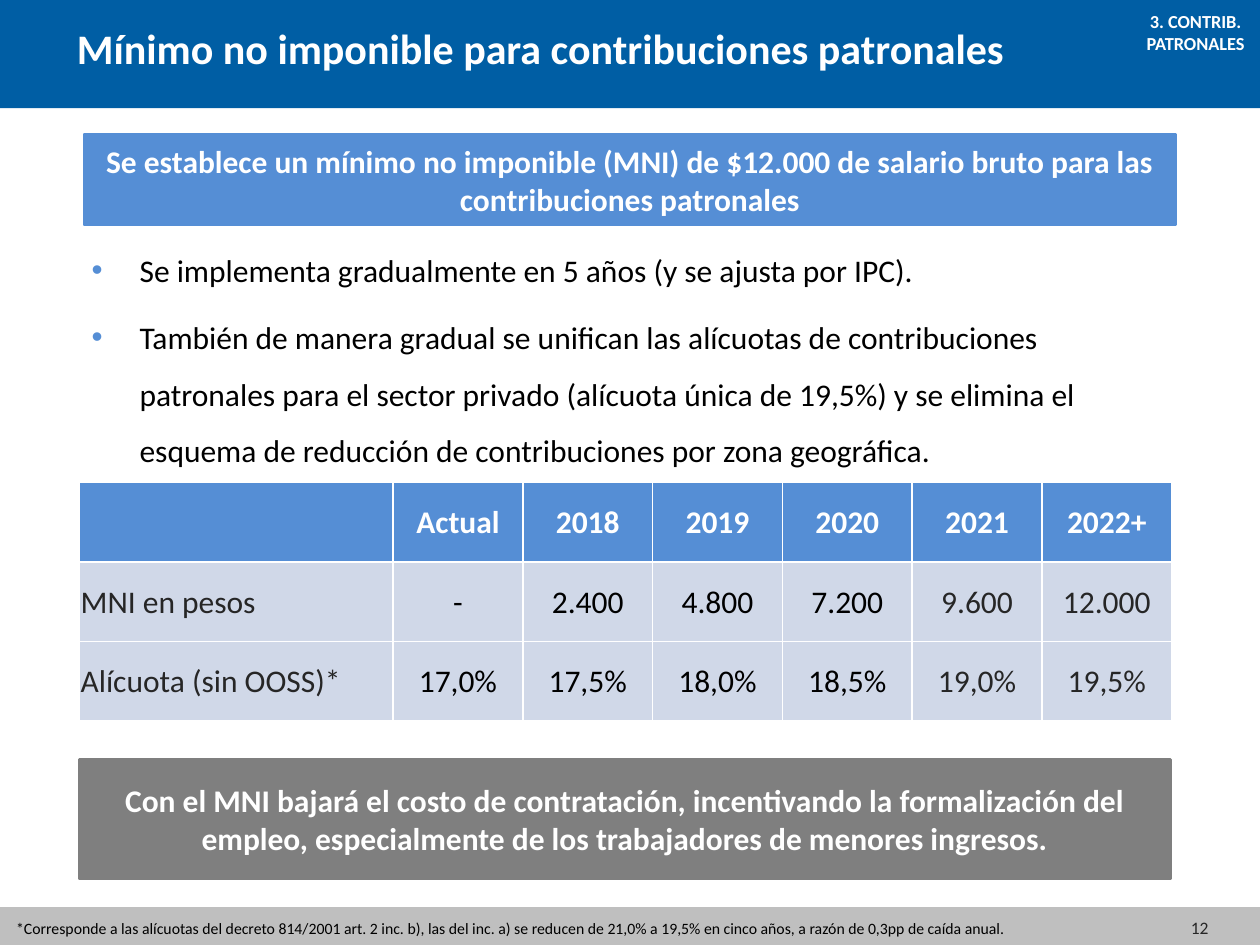
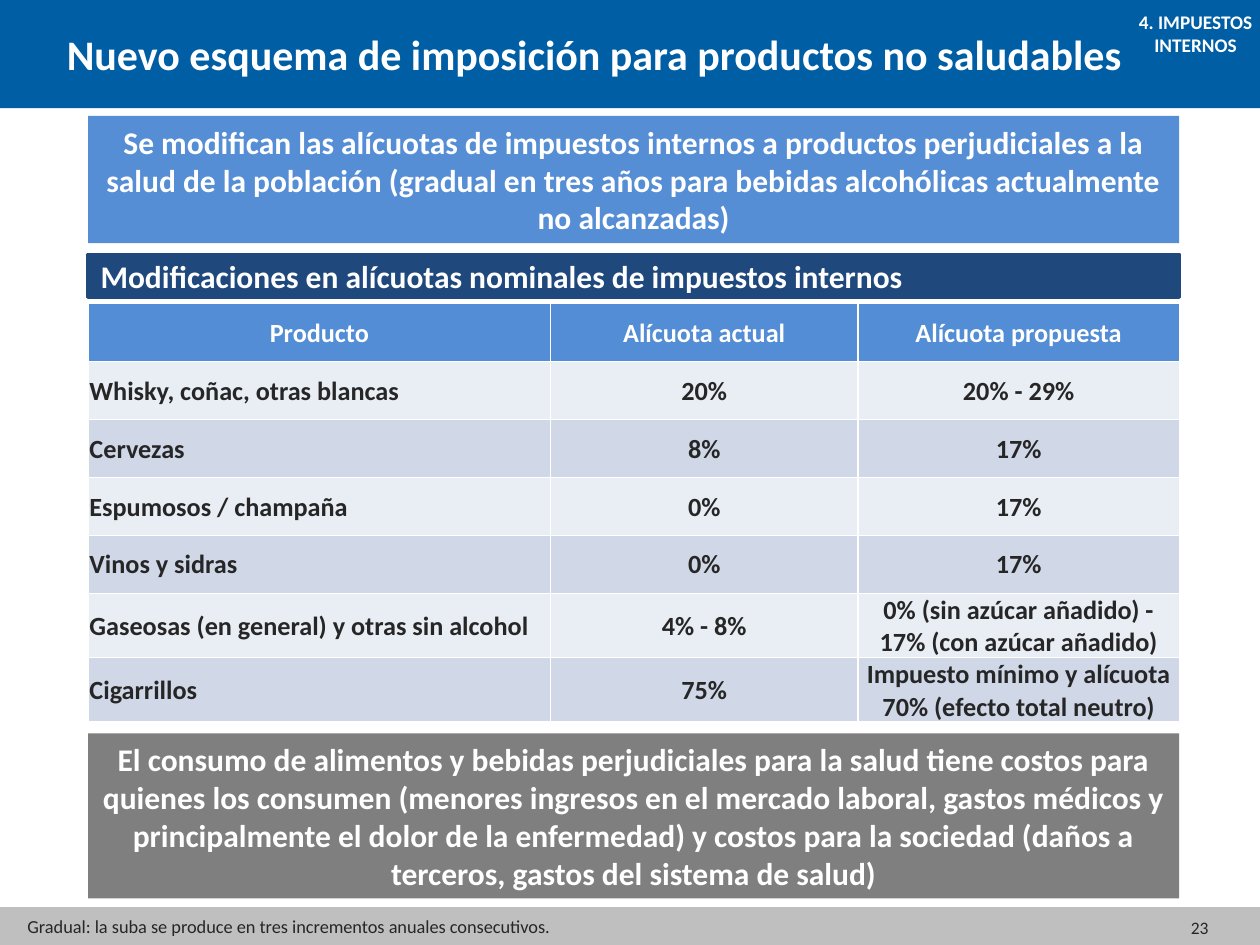
from lxml.etree import SubElement
from pptx import Presentation
from pptx.dml.color import RGBColor
from pptx.enum.shapes import MSO_SHAPE
from pptx.enum.text import MSO_ANCHOR, MSO_AUTO_SIZE, PP_ALIGN
from pptx.oxml import parse_xml
from pptx.oxml.ns import nsdecls, qn
from pptx.util import Inches, Pt

FONT = "Calibri"
COLORS = {
    "header": "005EA4", "footer": "BFBFBF", "blue": "558ED5", "table_blue": "538DD5",
    "navy": "1F497D", "gray": "7F7F7F", "row_light": "E9EDF4", "row_dark": "D0D8E8",
    "white": "FFFFFF", "black": "000000", "ink": "262626",
}
LEFT, CENTER, RIGHT = PP_ALIGN.LEFT, PP_ALIGN.CENTER, PP_ALIGN.RIGHT

# Content: boxes are (left, top, width, height) in inches
CONTRIBUTIONS = {
    "title": "Mínimo no imponible para contribuciones patronales",
    "title_box": (0.51, 0.13, 8.66, 0.5),
    "section": ["3. CONTRIB.", "PATRONALES"],
    "section_size": 10.5,
    "number": "12",
    "footnote": "*Corresponde a las alícuotas del decreto 814/2001 art. 2 inc. b), las del inc. a) "
                "se reducen de 21,0% a 19,5% en cinco años, a razón de 0,3pp de caída anual.",
    "footnote_style": ((0.03, 7.18, 9.66, 0.38), 9, "black"),
    "banners": [
        ((0.67, 1.07, 8.66, 0.71), "blue", 2, CENTER,
         ["Se establece un mínimo no imponible (MNI) de $12.000 de salario bruto para las "
          "contribuciones patronales"]),
        ((0.63, 6.03, 8.66, 0.94), "gray", 2, CENTER,
         ["Con el MNI bajará el costo de contratación, incentivando la formalización del "
          "empleo, especialmente de los trabajadores de menores ingresos."]),
    ],
}
BULLETS = [
    "Se implementa gradualmente en 5 años (y se ajusta por IPC).",
    "También de manera gradual se unifican las alícuotas de contribuciones patronales para el "
    "sector privado (alícuota única de 19,5%) y se elimina el esquema de reducción de "
    "contribuciones por zona geográfica.",
]
MNI_ROWS = [
    ("", "Actual", "2018", "2019", "2020", "2021", "2022+"),
    ("MNI en pesos", "-", "2.400", "4.800", "7.200", "9.600", "12.000"),
    ("Alícuota (sin OOSS)*", "17,0%", "17,5%", "18,0%", "18,5%", "19,0%", "19,5%"),
]

UNHEALTHY_PRODUCTS = {
    "title": "Nuevo esquema de imposición para productos no saludables",
    "title_box": (0.43, 0.18, 9.45, 0.5),
    "section": ["4. IMPUESTOS INTERNOS"],
    "section_size": 11,
    "number": "23",
    "footnote": "Gradual: la suba se produce en tres incrementos anuales consecutivos.",
    "footnote_style": ((0.12, 7.21, 6, 0.28), 10.5, "ink"),
    "banners": [
        ((0.7, 0.92, 8.66, 1.01), "blue", 0, CENTER,
         ["Se modifican las alícuotas de impuestos internos a productos perjudiciales a la",
          "salud de la población (gradual en tres años para bebidas alcohólicas actualmente "
          "no alcanzadas)"]),
        ((0.7, 2.02, 8.66, 0.34), "navy", 2, LEFT,
         ["Modificaciones en alícuotas nominales de impuestos internos"]),
        ((0.7, 5.82, 8.66, 1.31), "gray", 0, CENTER,
         ["El consumo de alimentos y bebidas perjudiciales para la salud tiene costos para "
          "quienes los consumen (menores ingresos en el mercado laboral, gastos médicos y "
          "principalmente el dolor de la enfermedad) y costos para la sociedad (daños a "
          "terceros, gastos del sistema de salud)"]),
    ],
}
PRODUCT_ROWS = [
    ("Producto", "Alícuota actual", "Alícuota propuesta"),
    ("Whisky, coñac, otras blancas", "20%", "20% - 29%"),
    ("Cervezas", "8%", "17%"),
    ("Espumosos / champaña", "0%", "17%"),
    ("Vinos y sidras", "0%", "17%"),
    ("Gaseosas (en general) y otras sin alcohol", "4% - 8%",
     "0% (sin azúcar añadido) - 17% (con azúcar añadido)"),
    ("Cigarrillos", "75%", "Impuesto mínimo y alícuota 70% (efecto total neutro)"),
]


def color(name):
    return RGBColor.from_string(COLORS[name])


def inches(box):
    return [Inches(length) for length in box]


def write(text_frame, lines, size, color_name, bold=False, align=LEFT):
    """Fill a text frame with one formatted paragraph per line."""
    for index, line in enumerate(lines):
        paragraph = text_frame.add_paragraph() if index else text_frame.paragraphs[0]
        paragraph.alignment = align
        run = paragraph.add_run()
        run.text = line
        run.font.name, run.font.size, run.font.bold = FONT, Pt(size), bold
        run.font.color.rgb = color(color_name)


def add_text(slide, box, lines, size, color_name, bold=False, align=LEFT, anchor=MSO_ANCHOR.TOP):
    text_frame = slide.shapes.add_textbox(*inches(box)).text_frame
    text_frame.word_wrap = True
    text_frame.vertical_anchor = anchor
    write(text_frame, lines, size, color_name, bold, align)
    return text_frame


def add_rectangle(slide, box, fill, line_width=0):
    shape = slide.shapes.add_shape(MSO_SHAPE.RECTANGLE, *inches(box))
    shape.shadow.inherit = False
    shape.fill.solid()
    shape.fill.fore_color.rgb = color(fill)
    if line_width:
        shape.line.color.rgb = color(fill)
        shape.line.width = Pt(line_width)
    else:
        shape.line.fill.background()
    return shape


def add_bullets(slide, box, lines):
    text_frame = add_text(slide, box, lines, 18, "black")
    for paragraph in text_frame.paragraphs:
        paragraph.line_spacing = 1.5
        paragraph.space_after = Pt(6)
        properties = paragraph._p.get_or_add_pPr()
        properties.set("marL", str(Inches(0.38)))
        properties.set("indent", str(Inches(-0.38)))
        bullet_color = SubElement(properties, qn("a:buClr"))
        SubElement(bullet_color, qn("a:srgbClr"), val=COLORS["blue"])
        SubElement(properties, qn("a:buFont"), typeface="Arial")
        SubElement(properties, qn("a:buChar"), char="•")


def add_borders(cell):
    properties = cell._tc.get_or_add_tcPr()
    for index, side in enumerate(("lnL", "lnR", "lnT", "lnB")):
        properties.insert(index, parse_xml(
            f'<a:{side} {nsdecls("a")} w="{Pt(1)}"><a:solidFill>'
            f'<a:srgbClr val="{COLORS["white"]}"/></a:solidFill></a:{side}>'))


def add_rate_table(slide, position, rows, widths, row_height, size, header_fill, row_fills,
                   bold_body=False, black_columns=()):
    box = (*position, sum(widths), row_height * len(rows))
    table = slide.shapes.add_table(len(rows), len(widths), *inches(box)).table
    for column, width in zip(table.columns, widths):
        column.width = Inches(width)
    for row_index, values in enumerate(rows):
        table.rows[row_index].height = Inches(row_height)
        header = row_index == 0
        for column_index, value in enumerate(values):
            cell = table.cell(row_index, column_index)
            cell.margin_left = cell.margin_right = cell.margin_top = Inches(0.01)
            cell.margin_bottom = 0
            cell.vertical_anchor = MSO_ANCHOR.MIDDLE
            cell.fill.solid()
            cell.fill.fore_color.rgb = color(
                header_fill if header else row_fills[(row_index - 1) % len(row_fills)])
            add_borders(cell)
            body_color = "black" if column_index in black_columns else "ink"
            if value:
                write(cell.text_frame, [value], size, "white" if header else body_color,
                      header or bold_body, CENTER if header or column_index else LEFT)


def add_base_slide(presentation, content):
    """Add bands, title, section tag, banners, footnote and page number."""
    slide = presentation.slides.add_slide(presentation.slide_layouts[5])
    add_rectangle(slide, (0, 0, 10, 0.86), "header")
    footer = add_rectangle(slide, (0, 7.21, 10, 0.29), "footer", 2)

    # Title, raised above the bands
    title = slide.shapes.title
    footer._element.addnext(title._element)
    title.left, title.top, title.width, title.height = inches(content["title_box"])
    title.text_frame.auto_size = MSO_AUTO_SIZE.NONE
    title.text_frame.word_wrap = True
    title.text_frame.vertical_anchor = MSO_ANCHOR.TOP
    write(title.text_frame, [content["title"]], 24, "white", True)

    add_text(slide, (8.86, 0.03, 1.26, 0.46), content["section"], content["section_size"],
             "white", True, CENTER)
    for box, fill, line_width, align, lines in content["banners"]:
        banner = add_rectangle(slide, box, fill, line_width)
        banner.text_frame.word_wrap = True
        banner.text_frame.vertical_anchor = MSO_ANCHOR.MIDDLE
        write(banner.text_frame, lines, 18, "white", True, align)

    # Footer
    box, size, color_name = content["footnote_style"]
    add_text(slide, box, [content["footnote"]], size, color_name, anchor=MSO_ANCHOR.MIDDLE)
    add_text(slide, (7.36, 7.16, 2.33, 0.4), [content["number"]], 10, "ink", align=RIGHT,
             anchor=MSO_ANCHOR.MIDDLE)
    return slide


def main():
    presentation = Presentation()
    presentation.slide_width, presentation.slide_height = Inches(10), Inches(7.5)

    # Employer contributions
    slide = add_base_slide(presentation, CONTRIBUTIONS)
    add_bullets(slide, (0.63, 1.79, 8.66, 1.96), BULLETS)
    add_rate_table(slide, (0.63, 3.83), MNI_ROWS, [2.49] + [1.03] * 6, 0.63, 18, "blue",
                   ["row_dark"], black_columns=range(1, 5))

    # Taxes on unhealthy products
    slide = add_base_slide(presentation, UNHEALTHY_PRODUCTS)
    add_rate_table(slide, (0.7, 2.41), PRODUCT_ROWS, [3.67, 2.44, 2.55], 0.46, 15, "table_blue",
                   ["row_light", "row_dark"], bold_body=True)

    presentation.save("out.pptx")


if __name__ == "__main__":
    main()
